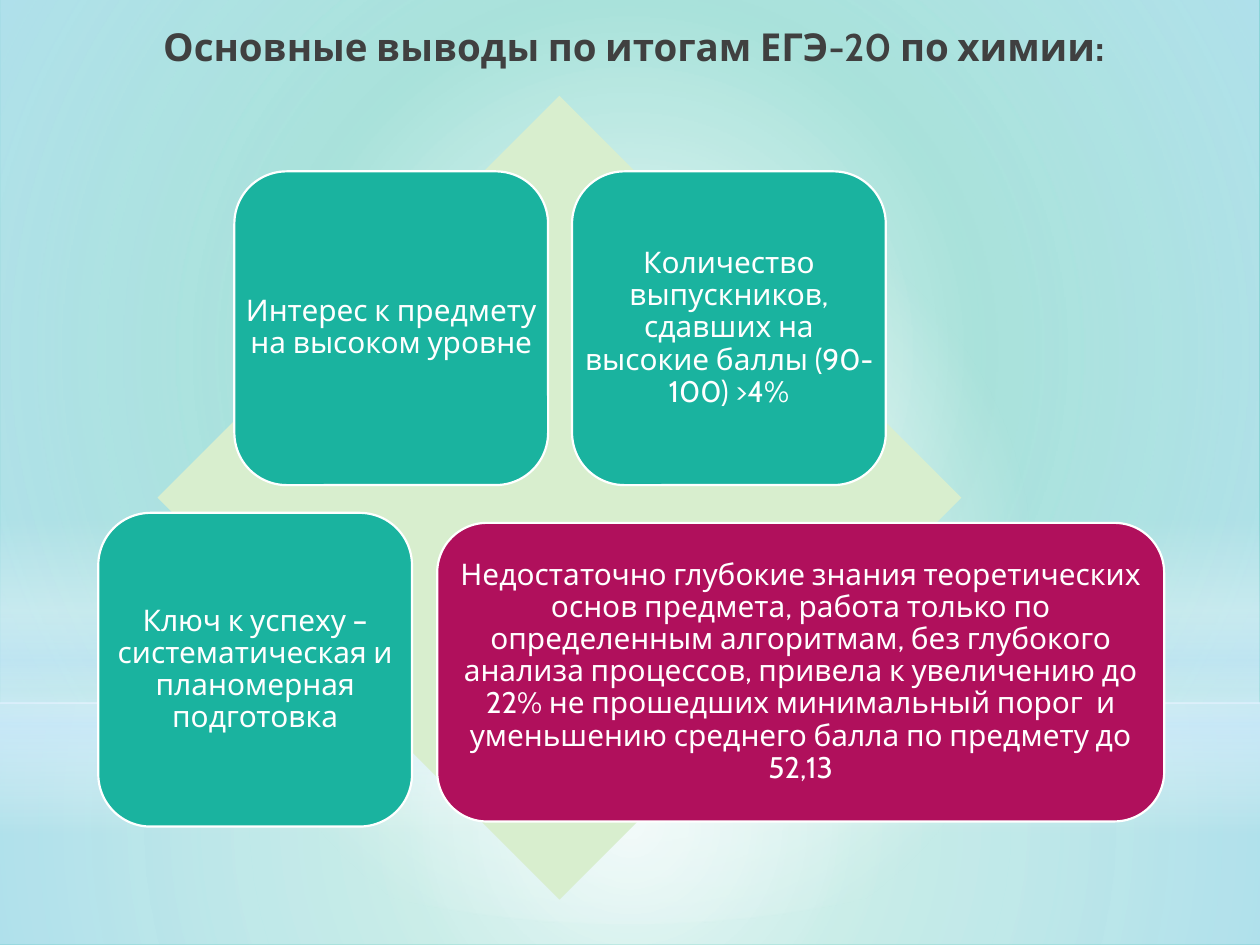
from lxml import etree
from pptx import Presentation
from pptx.dml.color import RGBColor
from pptx.enum.shapes import MSO_SHAPE
from pptx.enum.text import MSO_ANCHOR, PP_ALIGN
from pptx.oxml import parse_xml
from pptx.util import Inches, Pt

RECT, OVAL = MSO_SHAPE.RECTANGLE, MSO_SHAPE.OVAL
DIAMOND, ROUNDED = MSO_SHAPE.DIAMOND, MSO_SHAPE.ROUNDED_RECTANGLE
CENTER, MIDDLE, TOP = PP_ALIGN.CENTER, MSO_ANCHOR.MIDDLE, MSO_ANCHOR.TOP
NAMESPACE = "http://schemas.openxmlformats.org/drawingml/2006/main"
TEAL, CRIMSON, PALE_GREEN = "1AB39F", "B0105C", "D8EECE"
WHITE, ICE, GREY = "FFFFFF", "D6ECFF", "404040"
RADIAL = ('<a:path path="circle">'
          '<a:fillToRect l="50000" t="50000" r="50000" b="50000"/></a:path>')
DOWNWARD = '<a:lin ang="5400000" scaled="0"/>'

deck = Presentation()
deck.slide_width, deck.slide_height = Inches(10), Inches(7.5)
page = deck.slides.add_slide(deck.slide_layouts[6])


def color(hex_text):
    return RGBColor.from_string(hex_text)


def add_text(place, text, anchor, inset, font_format, para_format):
    box = page.shapes.add_textbox(*map(Inches, place))
    frame = box.text_frame
    frame.word_wrap = True
    frame.vertical_anchor = anchor
    for side, margin in zip(("left", "top", "right", "bottom"), inset):
        setattr(frame, f"margin_{side}", Inches(margin))
    para = frame.paragraphs[0]
    for name, value in para_format.items():
        setattr(para, name, value)
    span = para.add_run()
    span.text = text
    for name, value in font_format.items():
        setattr(span.font, name, value)
    return span


# Background glow: stops are (position %, colour, opacity %)
page.background.fill.solid()
page.background.fill.fore_color.rgb = color(TEAL)
glows = [
    (RECT, (0, 5.58, 10, 1.92), RADIAL,
     [(0, WHITE, 91), (37, WHITE, 76), (100, ICE, 79)]),
    (RECT, (0, 0, 10, 5.58), RADIAL,
     [(0, WHITE, 89), (48, WHITE, 62), (100, ICE, 79)]),
    (RECT, (0, 4.12, 10, 2.5), DOWNWARD,
     [(0, WHITE, 0), (29, WHITE, 30), (45, ICE, 40),
      (55, WHITE, 26), (65, ICE, 60), (100, WHITE, 0)]),
    (OVAL, (0, 1.75, 10, 5.58), RADIAL, [(0, WHITE, 100), (56, WHITE, 0)]),
]
for kind, place, direction, stops in glows:
    glow = page.shapes.add_shape(kind, *map(Inches, place))
    glow.shadow.inherit = False
    glow.line.fill.background()
    stop_xml = "".join(
        f'<a:gs pos="{position * 1000}"><a:srgbClr val="{tint}">'
        f'<a:alpha val="{opacity * 1000}"/></a:srgbClr></a:gs>'
        for position, tint, opacity in stops)
    gradient = parse_xml(
        f'<a:gradFill xmlns:a="{NAMESPACE}" rotWithShape="1">'
        f'<a:gsLst>{stop_xml}</a:gsLst>{direction}</a:gradFill>')
    geometry = glow.element.spPr.find(etree.QName(NAMESPACE, "prstGeom"))
    geometry.addnext(gradient)

# Title
title = add_text((0.28, 0.13, 9.45, 0.79),
                 "Основные выводы по итогам ЕГЭ-20 по химии:",
                 TOP, (0.15, 0.05, 0.1, 0.05),
                 {"size": Pt(22), "name": "Cabin", "bold": True},
                 {"alignment": CENTER, "space_after": Pt(3)})
title.font.color.rgb = color(GREY)

# Diamond with four conclusions on it
diamond = page.shapes.add_shape(DIAMOND, *map(Inches, (1.25, 0.76, 6.38, 6.38)))
diamond.shadow.inherit = False
diamond.fill.solid()
diamond.fill.fore_color.rgb = color(PALE_GREEN)
diamond.line.fill.background()

SIDE = 2.49
conclusions = [
    ((1.86, 1.36, SIDE, SIDE), TEAL, "Интерес к предмету на высоком уровне"),
    ((4.54, 1.36, SIDE, SIDE), TEAL,
     "Количество выпускников, сдавших на высокие баллы (90-100) >4%"),
    ((0.78, 4.07, SIDE, SIDE), TEAL,
     "Ключ к успеху – систематическая и планомерная подготовка"),
    ((3.47, 4.15, 5.77, 2.37), CRIMSON,
     "Недостаточно глубокие знания теоретических основ предмета, работа "
     "только по определенным алгоритмам, без глубокого анализа процессов, "
     "привела к увеличению до 22% не прошедших минимальный порог  и "
     "уменьшению среднего балла по предмету до 52,13"),
]
for place, fill, text in conclusions:
    card = page.shapes.add_shape(ROUNDED, *map(Inches, place))
    card.shadow.inherit = False
    card.fill.solid()
    card.fill.fore_color.rgb = color(fill)
    card.line.color.rgb = color(WHITE)
    card.line.width = Pt(1.25)
    # A separate box lets the text run wider than the rounded corners allow
    label = add_text(place, text, MIDDLE, (0.07,) * 4,
                     {"size": Pt(17), "name": "Cabin"},
                     {"alignment": CENTER, "line_spacing": 0.9,
                      "space_after": Pt(6)})
    label.font.color.rgb = color(WHITE)

deck.save("out.pptx")
